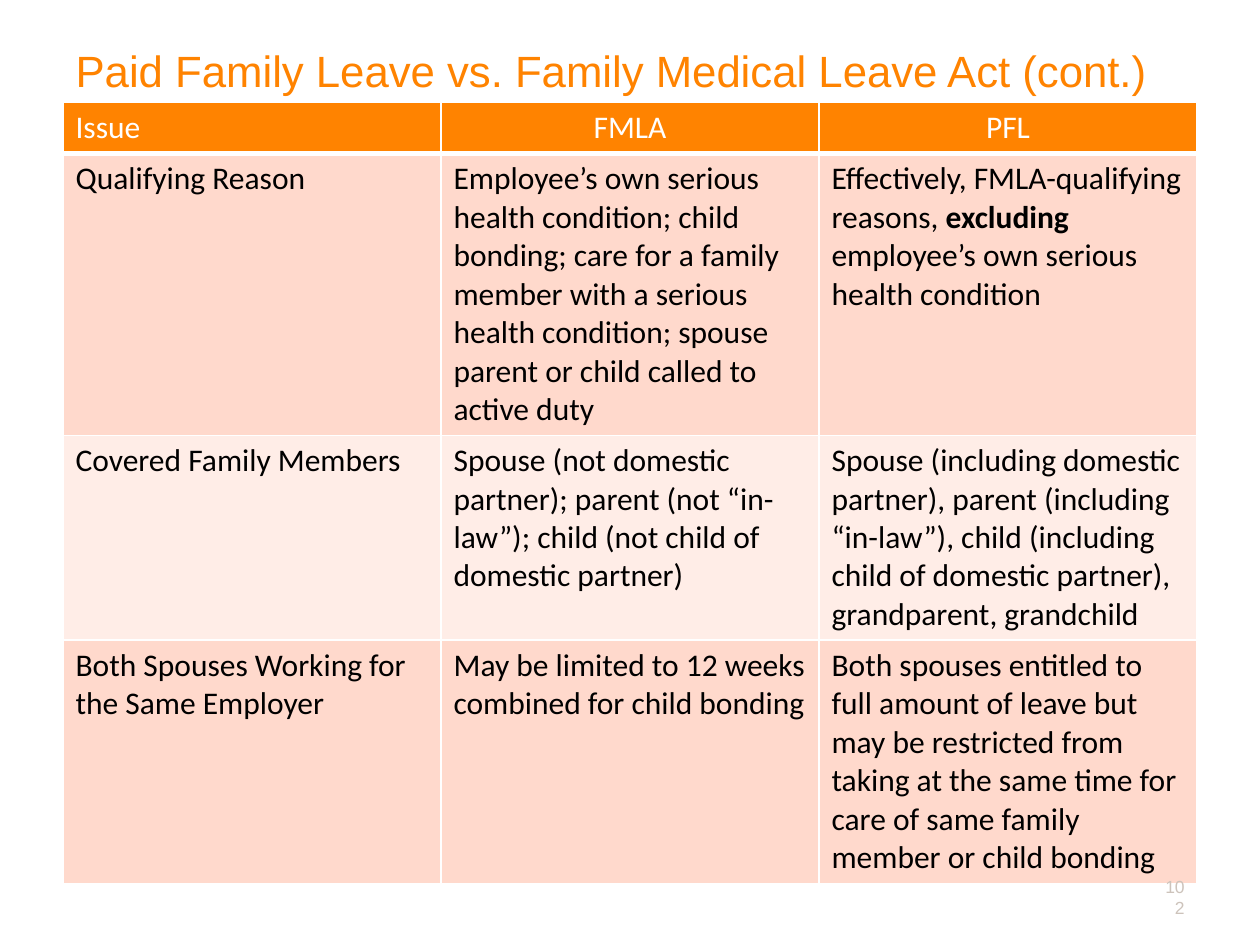
from dataclasses import dataclass

from lxml.etree import SubElement
from pptx import Presentation
from pptx.dml.color import RGBColor
from pptx.enum.text import MSO_ANCHOR, PP_ALIGN
from pptx.oxml.ns import qn
from pptx.util import Pt


@dataclass(frozen=True)
class Theme:
    accent: str = "FF8300"
    band_dark: str = "FFD9CC"
    band_light: str = "FFEDE7"
    white: str = "FFFFFF"
    ink: str = "000000"
    muted: str = "CDC3BB"
    heading_font: str = "Arial"
    table_font: str = "Calibri"
    title_size: int = 25
    table_size: int = 18
    number_size: int = 10


THEME = Theme()

HEADINGS = ["Issue", "FMLA", "PFL"]
# A cell is a list of (text, bold) runs.
COMPARISON = [
    [
        [("Qualifying Reason", False)],
        [("Employee’s own serious health condition; child bonding; care for a "
          "family member with a serious health condition; spouse parent or "
          "child called to active duty", False)],
        [("Effectively, FMLA-qualifying reasons, ", False),
         ("excluding", True),
         (" employee’s own serious health condition", False)],
    ],
    [
        [("Covered Family Members", False)],
        [("Spouse (not domestic partner); parent (not “in-law”); child (not "
          "child of domestic partner)", False)],
        [("Spouse (including domestic partner), parent (including “in-law”), "
          "child (including child of domestic partner), grandparent, "
          "grandchild", False)],
    ],
    [
        [("Both Spouses Working for the Same Employer", False)],
        [("May be limited to 12 weeks combined for child bonding", False)],
        [("Both spouses entitled to full amount of leave but may be "
          "restricted from taking at the same time for care of same family "
          "member or child bonding", False)],
    ],
]


def add_run(paragraph, text, font, size, color, bold=False):
    run = paragraph.add_run()
    run.text = text
    run.font.name = font
    run.font.size = Pt(size)
    run.font.bold = bold
    run.font.color.rgb = RGBColor.from_string(color)


def place_title(slide, left, top, width, height, text):
    title = slide.shapes.title
    title.left, title.top = Pt(left), Pt(top)
    title.width, title.height = Pt(width), Pt(height)
    frame = title.text_frame
    frame.word_wrap = True
    frame.vertical_anchor = MSO_ANCHOR.TOP
    heading = frame.paragraphs[0]
    heading.alignment = PP_ALIGN.LEFT
    add_run(heading, text, THEME.heading_font, THEME.title_size, THEME.accent)


def set_borders(cell, bottom_width):
    properties = cell._tc.get_or_add_tcPr()
    for side, width in (("L", 1), ("R", 1), ("T", 1), ("B", bottom_width)):
        line = SubElement(properties, qn(f"a:ln{side}"), w=str(Pt(width)))
        fill = SubElement(line, qn("a:solidFill"))
        SubElement(fill, qn("a:srgbClr"), val=THEME.white)


def fill_cell(cell, runs, background, color, alignment, bottom_width):
    set_borders(cell, bottom_width)
    cell.fill.solid()
    cell.fill.fore_color.rgb = RGBColor.from_string(background)
    paragraph = cell.text_frame.paragraphs[0]
    paragraph.alignment = alignment
    for text, bold in runs:
        add_run(paragraph, text, THEME.table_font, THEME.table_size, color, bold)


def place_comparison(slide, left, top, width, height, row_height):
    """Rows start at row_height and grow with their text to fill the box."""
    frame = slide.shapes.add_table(
        len(COMPARISON) + 1, len(HEADINGS),
        Pt(left), Pt(top), Pt(width), Pt(height))
    table = frame.table
    for row in table.rows:
        row.height = Pt(row_height)
    frame.height = Pt(height)

    for column, heading in enumerate(HEADINGS):
        alignment = PP_ALIGN.CENTER if column else PP_ALIGN.LEFT
        fill_cell(table.cell(0, column), [(heading, False)],
                  THEME.accent, THEME.white, alignment, 3)
    for row, issue in enumerate(COMPARISON, start=1):
        band = THEME.band_dark if row % 2 else THEME.band_light
        for column, runs in enumerate(issue):
            fill_cell(table.cell(row, column), runs,
                      band, THEME.ink, PP_ALIGN.LEFT, 1)


def place_slide_number(slide, left, top, width, height, number):
    box = slide.shapes.add_textbox(Pt(left), Pt(top), Pt(width), Pt(height))
    frame = box.text_frame
    frame.word_wrap = True
    frame.vertical_anchor = MSO_ANCHOR.MIDDLE
    paragraph = frame.paragraphs[0]
    paragraph.alignment = PP_ALIGN.RIGHT
    add_run(paragraph, number, THEME.heading_font, THEME.number_size, THEME.muted)


def main():
    deck = Presentation()
    deck.slide_width, deck.slide_height = Pt(720), Pt(540)
    slide = deck.slides.add_slide(deck.slide_layouts[5])
    place_title(slide, 36, 21.6, 648, 90,
                "Paid Family Leave vs. Family Medical Leave Act (cont.)")
    place_comparison(slide, 36, 58.5, 648, 440, 29.2)
    place_slide_number(slide, 653.8, 498.2, 30.2, 28.8, "102")
    deck.save("out.pptx")


if __name__ == "__main__":
    main()
